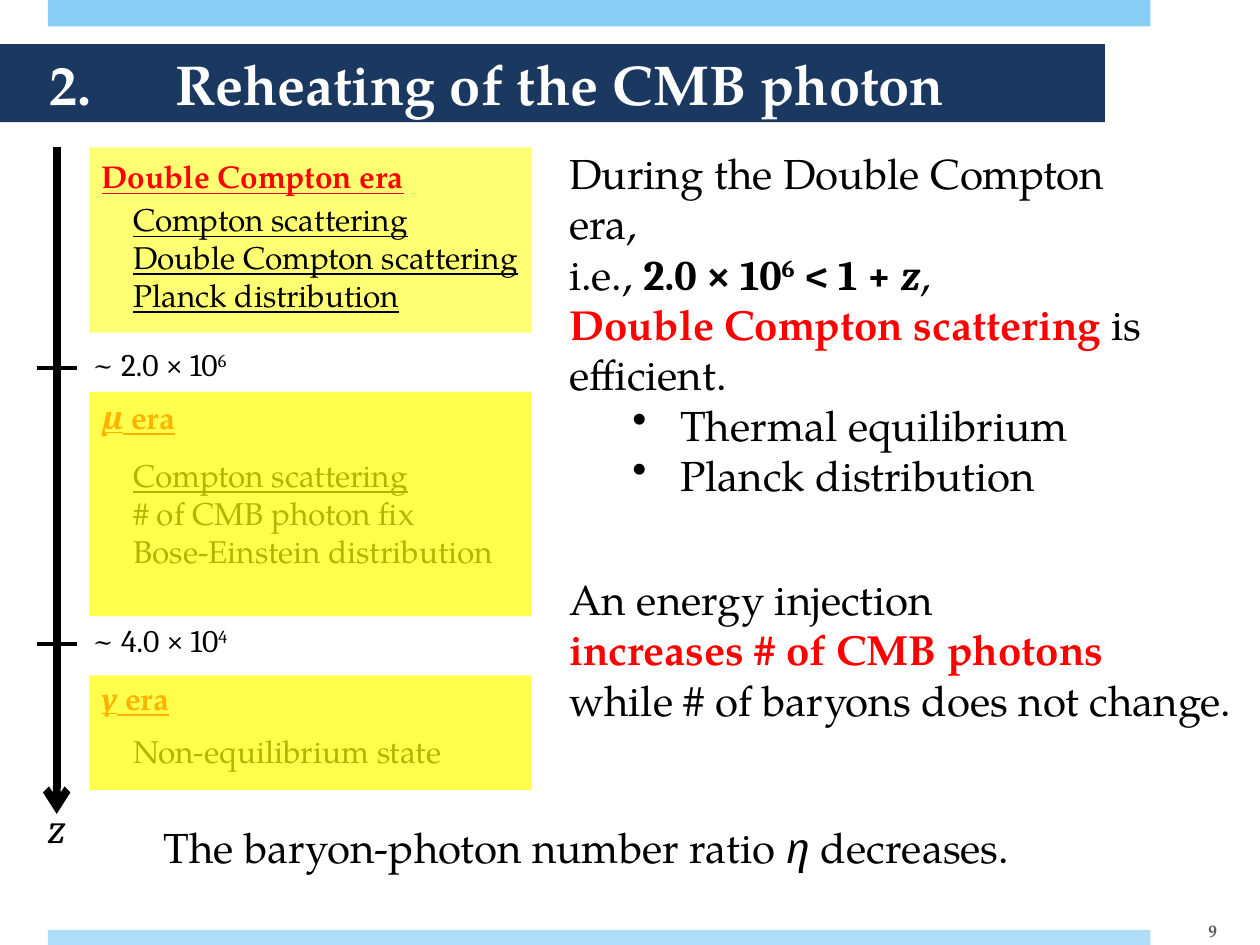
from dataclasses import dataclass, field
from lxml.etree import SubElement
from pptx import Presentation
from pptx.dml.color import RGBColor
from pptx.enum.shapes import MSO_CONNECTOR, MSO_SHAPE
from pptx.enum.text import MSO_ANCHOR, MSO_AUTO_SIZE, PP_ALIGN
from pptx.oxml.ns import qn
from pptx.util import Inches, Pt

WHITE = RGBColor(0xFF, 0xFF, 0xFF)
BLACK = RGBColor(0, 0, 0)
RED = RGBColor(0xFF, 0, 0)
GREY = RGBColor(0x59, 0x59, 0x59)
NAVY = RGBColor(0x1B, 0x38, 0x61)
SKY = RGBColor(0x88, 0xCD, 0xF4)
PALE = RGBColor(0xAF, 0xDD, 0xF8)
YELLOW = RGBColor(0xFF, 0xFF, 0)
SERIF, MATH = "TeX Gyre Pagella", "Cambria"
COLUMNS, ROWS = 100, 75

deck = Presentation()
deck.slide_width, deck.slide_height = Inches(10), Inches(7.5)
COL, ROW = deck.slide_width / COLUMNS, deck.slide_height / ROWS
slide = deck.slides.add_slide(deck.slide_layouts[5])


@dataclass
class Area:
    left: float
    top: float
    width: float
    height: float

    def place(self) -> tuple:
        return (round(self.left * COL), round(self.top * ROW),
                round(self.width * COL), round(self.height * ROW))


@dataclass
class Run:
    text: str
    look: dict = field(default_factory=dict)
    color: RGBColor = BLACK
    raised: bool = False


@dataclass
class Era:
    area: Area
    alpha: int
    head: list
    head_area: Area
    lines: list
    lines_area: Area


def math(text: str, raised: bool = False, **look) -> Run:
    return Run(text, {"name": MATH, **look}, raised=raised)


def strong(text: str, color: RGBColor = RED, **look) -> Run:
    return Run(text, {"bold": True, **look}, color)


def under(text: str) -> Run:
    return Run(text, {"underline": True})


def fill_line(para, runs: list, size: float) -> None:
    for item in runs:
        run = para.add_run()
        run.text = item.text
        for key, value in {"name": SERIF, "size": Pt(size), **item.look}.items():
            setattr(run.font, key, value)
        run.font.color.rgb = item.color
        if item.raised:
            run.font._element.set("baseline", "30000")


def add_text(area: Area, lines: list, size: float = 24, wrap: bool = True):
    box = slide.shapes.add_textbox(*area.place())
    frame = box.text_frame
    frame.word_wrap = wrap
    frame.auto_size = MSO_AUTO_SIZE.SHAPE_TO_FIT_TEXT
    for index, runs in enumerate(lines):
        para = frame.add_paragraph() if index else frame.paragraphs[0]
        fill_line(para, runs, size)
    return frame


def add_bar(area: Area, color: RGBColor, alpha: int = 100) -> None:
    bar = slide.shapes.add_shape(MSO_SHAPE.RECTANGLE, *area.place())
    bar.shadow.inherit = False
    bar.fill.solid()
    bar.fill.fore_color.rgb = color
    bar.line.fill.background()
    if alpha < 100:
        tone = bar._element.spPr.find(qn("a:solidFill"))[0]
        SubElement(tone, qn("a:alpha")).set("val", str(alpha * 1000))


def add_rule(left: float, top: float, right: float, bottom: float,
             weight: float, arrow: bool = False) -> None:
    rule = slide.shapes.add_connector(
        MSO_CONNECTOR.STRAIGHT, round(left * COL), round(top * ROW),
        round(right * COL), round(bottom * ROW))
    rule.line.color.rgb = BLACK
    rule.line.width = Pt(weight)
    if arrow:
        SubElement(rule.line._get_or_add_ln(), qn("a:tailEnd")).set("type", "arrow")
    SubElement(rule._element.spPr, qn("a:effectLst"))


def add_bullet(para) -> None:
    para.level = 1
    props = para._p.get_or_add_pPr()
    props.set("marL", str(Inches(0.88)))
    props.set("indent", str(Inches(-0.38)))
    SubElement(props, qn("a:buChar")).set("char", "•")


def add_tab(para, place: int) -> None:
    tabs = SubElement(para._p.get_or_add_pPr(), qn("a:tabLst"))
    tab = SubElement(tabs, qn("a:tab"))
    tab.set("pos", str(place))
    tab.set("algn", "l")


def set_title(text: str) -> None:
    title = slide.shapes.title
    title.left, title.top, title.width, title.height = Area(0, 3.5, 87.7, 6.2).place()
    title.fill.solid()
    title.fill.fore_color.rgb = NAVY
    frame = title.text_frame
    looks = {"margin_left": Inches(0.39), "margin_right": 0,
             "margin_top": Inches(0.04), "margin_bottom": Inches(0.04),
             "vertical_anchor": MSO_ANCHOR.MIDDLE, "auto_size": MSO_AUTO_SIZE.NONE}
    for key, value in looks.items():
        setattr(frame, key, value)
    para = frame.paragraphs[0]
    para.alignment = PP_ALIGN.LEFT
    add_tab(para, Inches(1))
    fill_line(para, [strong(text, WHITE)], 32)


def era_head(sign: str) -> list:
    look = {"bold": True, "underline": True}
    return [Run(sign, {"name": MATH, "italic": True, **look}, RED),
            Run(" era", look, RED)]


def add_words(era: Era) -> None:
    add_text(era.lines_area, era.lines, 18, False)
    add_text(era.head_area, [era.head], 18, False)


ERAS = [
    Era(Area(7.1, 11.7, 35.1, 14.7), 55,
        [strong("Double Compton era", underline=True)], Area(7.1, 12, 27.3, 4),
        [[under("Compton scattering")], [under("Double Compton scattering")],
         [under("Planck distribution")]], Area(9.6, 15.4, 32.6, 10.1)),
    Era(Area(7.1, 31.1, 35.1, 17.8), 70, era_head("μ"), Area(7.1, 31.1, 8.4, 4),
        [[under("Compton scattering")], [Run("# of CMB photon fix")],
         [Run("Bose-Einstein distribution")]], Area(9.6, 35.7, 30.8, 10.1)),
    Era(Area(7.1, 53.6, 35.1, 9.1), 70, era_head("y"), Area(7.1, 53.4, 8, 4),
        [[Run("Non-equilibrium state")]], Area(9.6, 57.6, 27, 4)),
]
TICKS = [(29.2, "~ 2.0 × 10", "6"), (51.1, "~ 4.0 × 10", "4")]

add_bar(Area(3.8, 0, 87.5, 2.1), SKY)
add_bar(Area(3.8, 73.8, 87.5, 1.2), PALE)
set_title("2. \tReheating of the CMB photon")

add_text(Area(44.2, 11.2, 50, 13.1), [
    [Run("During the Double Compton era,")],
    [Run("i.e., "), math("2.0 × 10", bold=True), math("6", True, bold=True),
     math(" < 1 + ", bold=True), math("z", bold=True, italic=True), Run(",")]])
effects = add_text(Area(44.2, 23.2, 55.8, 17.2), [
    [strong("Double Compton scattering"), Run(" is efficient.")],
    [Run("Thermal equilibrium")], [Run("Planck distribution")]])
for para in effects.paragraphs[1:]:
    add_bullet(para)
add_text(Area(44.2, 45, 55.8, 13.1), [
    [Run("An energy injection")], [strong("increases # of CMB photons")],
    [Run("while # of baryons does not change.")]])
add_text(Area(12, 64.7, 71, 5), [
    [Run("The baryon-photon number ratio "), math("η", italic=True),
     Run(" decreases.")]])
add_text(Area(2.8, 63.1, 4.2, 5), [[math("z", italic=True)]], wrap=False)

number = add_text(Area(92.7, 72.7, 6.1, 2.3), [[strong("9", GREY)]], 10)
for key in ("margin_top", "margin_right", "margin_bottom"):
    setattr(number, key, 0)
number.auto_size = MSO_AUTO_SIZE.NONE
number.vertical_anchor = MSO_ANCHOR.MIDDLE
number.paragraphs[0].alignment = PP_ALIGN.CENTER

first, *later = ERAS
add_bar(first.area, YELLOW, first.alpha)
add_rule(4.5, 11.7, 4.5, 64.6, 4.5, True)
for row, text, power in TICKS:
    add_text(Area(6.3, row - 2.3, 13.2, 4), [[math(text), math(power, True)]], 18, False)
    add_rule(2.9, row, 6.1, row, 2)
for era in ERAS:
    add_words(era)
for era in later:
    add_bar(era.area, YELLOW, era.alpha)

deck.save("out.pptx")
